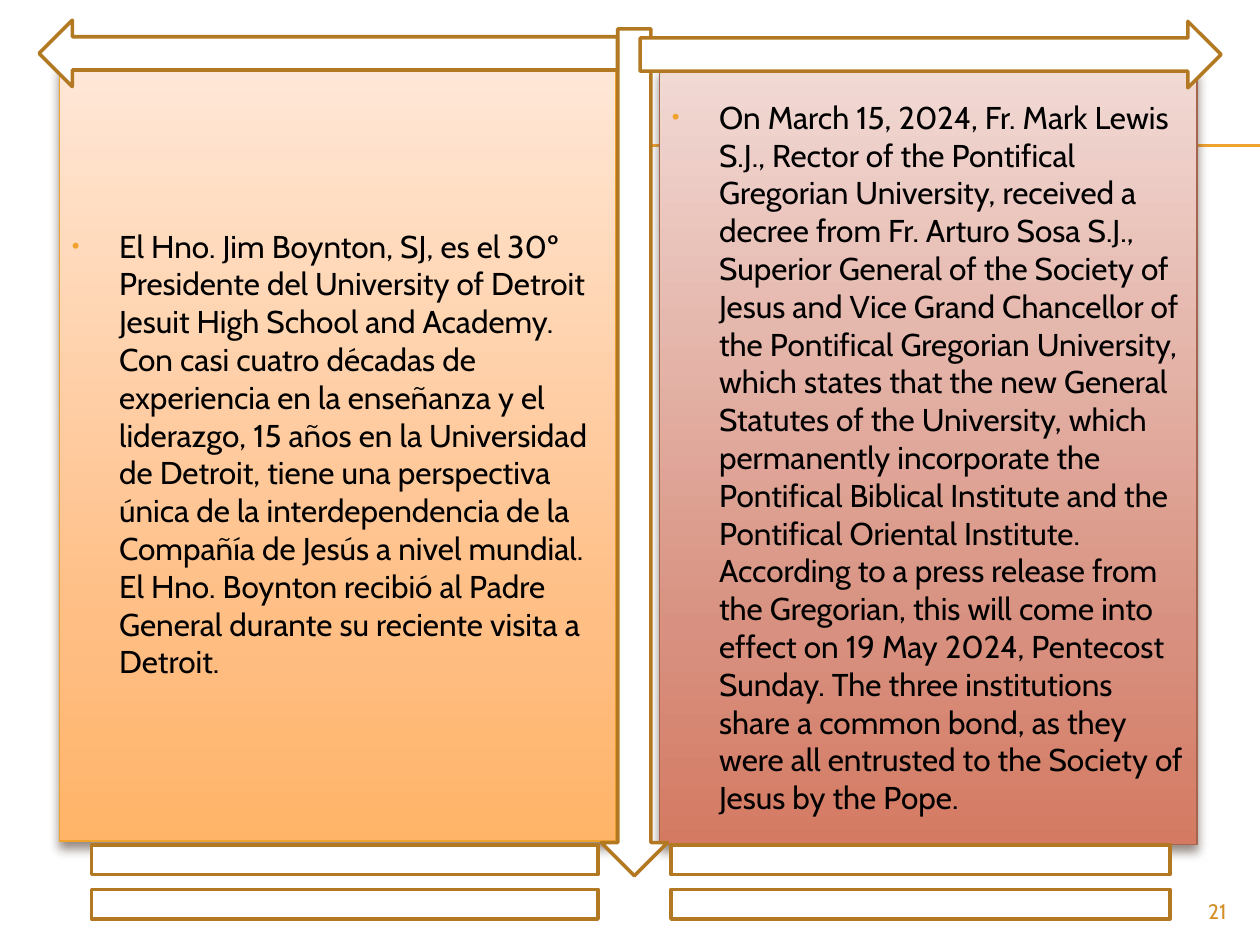
from lxml.etree import SubElement
from pptx import Presentation
from pptx.dml.color import RGBColor
from pptx.enum.shapes import MSO_CONNECTOR, MSO_SHAPE
from pptx.enum.text import MSO_ANCHOR, PP_ALIGN
from pptx.oxml import parse_xml
from pptx.oxml.ns import nsdecls, qn
from pptx.util import Pt

FONT = "Cabin"
GOLD, BRONZE = "F0A22E", "B27822"

SPANISH = (
    "El Hno. Jim Boynton, SJ, es el 30º Presidente del University of Detroit "
    "Jesuit High School and Academy. Con casi cuatro décadas de experiencia en "
    "la enseñanza y el liderazgo, 15 años en la Universidad de Detroit, tiene "
    "una perspectiva única de la interdependencia de la Compañía de Jesús a "
    "nivel mundial. El Hno. Boynton recibió al Padre General durante su "
    "reciente visita a Detroit."
)
ENGLISH = (
    "On March 15, 2024, Fr. Mark Lewis S.J., Rector of the Pontifical Gregorian "
    "University, received a decree from Fr. Arturo Sosa S.J., Superior General "
    "of the Society of Jesus and Vice Grand Chancellor of the Pontifical "
    "Gregorian University, which states that the new General Statutes of the "
    "University, which permanently incorporate the Pontifical Biblical Institute "
    "and the Pontifical Oriental Institute. According to a press release from "
    "the Gregorian, this will come into effect on 19 May 2024, Pentecost Sunday. "
    "The three institutions share a common bond, as they were all entrusted to "
    "the Society of Jesus by the Pope."
)


def color(hex_string):
    return RGBColor.from_string(hex_string)


def add_text(sp, text, size=18, fill="000000", align=PP_ALIGN.LEFT,
             anchor=MSO_ANCHOR.TOP, bullet=None):
    tf = sp.text_frame
    tf.word_wrap = True
    tf.vertical_anchor = anchor
    p = tf.paragraphs[0]
    p.alignment = align
    r = p.add_run()
    r.text = text
    r.font.name = FONT
    r.font.size = Pt(size)
    r.font.color.rgb = color(fill)
    if bullet:
        p.space_before = Pt(size * 0.2)
        pPr = p._p.get_or_add_pPr()
        pPr.set("marL", str(Pt(27)))
        pPr.set("indent", str(Pt(-27)))
        SubElement(SubElement(pPr, qn("a:buClr")), qn("a:srgbClr"), val=bullet)
        SubElement(pPr, qn("a:buSzPct"), val="70000")
        SubElement(pPr, qn("a:buFont"), typeface="Arial")
        SubElement(pPr, qn("a:buChar"), char="•")


def add_block(s, kind, box, fill="FFFFFF", line=BRONZE, width=2):
    sp = s.shapes.add_shape(kind, *map(Pt, box))
    sp.fill.solid()
    sp.fill.fore_color.rgb = color(fill)
    sp.line.color.rgb = color(line)
    sp.line.width = Pt(width)
    sp.shadow.inherit = False
    return sp


def add_rule(s, x1, x2, y):
    line = s.shapes.add_connector(MSO_CONNECTOR.STRAIGHT, Pt(x1), Pt(y), Pt(x2), Pt(y))
    line.line.color.rgb = color(GOLD)
    line.line.width = Pt(0.75)
    SubElement(line._element.spPr, qn("a:effectLst"))


def add_panel(s, box, text, shades, line):
    sp = add_block(s, MSO_SHAPE.RECTANGLE, box, line=line, width=0.79)
    spPr = sp._element.spPr

    # Gradient from top to bottom
    stops = "".join(
        f'<a:gs pos="{pos}"><a:srgbClr val="{shade}"/></a:gs>'
        for pos, shade in zip((0, 72000, 100000), shades))
    gradient = parse_xml(
        f'<a:gradFill {nsdecls("a")} rotWithShape="1"><a:gsLst>{stops}</a:gsLst>'
        '<a:lin ang="5400000" scaled="0"/></a:gradFill>')
    spPr.replace(spPr.find(qn("a:solidFill")), gradient)

    # Soft shadow below
    shadow = SubElement(spPr.find(qn("a:effectLst")), qn("a:outerShdw"),
                        blurRad=str(Pt(6)), dist=str(Pt(4)), dir="5400000",
                        rotWithShape="0")
    tint = SubElement(shadow, qn("a:srgbClr"), val="4E3B30")
    SubElement(tint, qn("a:alpha"), val="60000")

    add_text(sp, text, anchor=MSO_ANCHOR.MIDDLE, bullet=GOLD)


def add_frame(s, left, top, width, height):
    """Arrows around the panels and double bars below them."""
    middle = left + width / 2
    bar_top = top + height - 72
    for kind, box in (
        (MSO_SHAPE.DOWN_ARROW, (343.5, top + 16.5, 38, 484)),
        (MSO_SHAPE.RIGHT_ARROW, (middle + 5.8, top + 12.2, 332, 38)),
        (MSO_SHAPE.LEFT_ARROW, (left + 22.3, top + 11.5, 330.5, 38)),
        (MSO_SHAPE.MATH_EQUAL, (left, bar_top, 394, 72)),
        (MSO_SHAPE.MATH_EQUAL, (left + width - 388, bar_top, 388, 72)),
    ):
        add_block(s, kind, box)


def main():
    prs = Presentation()
    prs.slide_width, prs.slide_height = Pt(720), Pt(540)
    s = prs.slides.add_slide(prs.slide_layouts[6])

    # Double rule behind the panels
    for y in (82.8, 83.5):
        add_rule(s, 40.3, 720, y)

    # Spanish and English panels
    add_panel(s, (34, 37.6, 318, 443), SPANISH,
              ("FFE7D7", "FFBE84", "FFB468"), GOLD)
    add_panel(s, (376.8, 39.6, 307.2, 443), ENGLISH,
              ("F1D9D4", "D89180", "D47A62"), "A5644E")

    add_frame(s, 0, 0, 720, 540)

    # Slide number
    number = s.shapes.add_textbox(Pt(648), Pt(509.8), Pt(60), Pt(19.4))
    add_text(number, "21", size=12, fill="D48F29", align=PP_ALIGN.RIGHT)

    prs.save("out.pptx")


if __name__ == "__main__":
    main()
